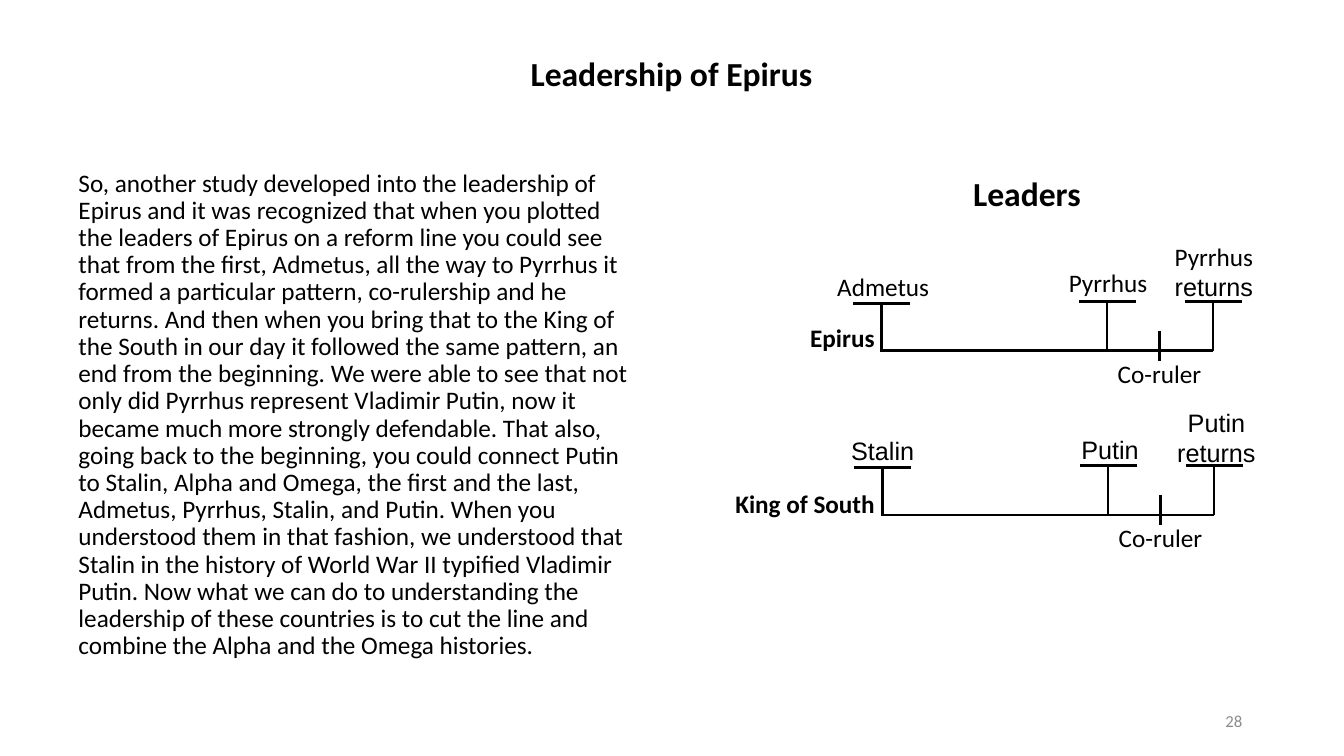
import pptx
import pptx.dml.color
import pptx.enum.shapes
import pptx.enum.text
import pptx.oxml.ns
import pptx.util

BLACK = pptx.dml.color.RGBColor(0x00, 0x00, 0x00)
GRAY = pptx.dml.color.RGBColor(0x8C, 0x8C, 0x8C)
ALIGN = pptx.enum.text.PP_ALIGN
ANCHOR = pptx.enum.text.MSO_ANCHOR
Inches = pptx.util.Inches

BODY_SENTENCES = [
    "So, another study developed into the leadership of Epirus and it was recognized that "
    "when you plotted the leaders of Epirus on a reform line you could see that from the first, "
    "Admetus, all the way to Pyrrhus it formed a particular pattern, co-rulership and he returns.",
    "And then when you bring that to the King of the South in our day it followed the same "
    "pattern, an end from the beginning.",
    "We were able to see that not only did Pyrrhus represent Vladimir Putin, now it became much "
    "more strongly defendable.",
    "That also, going back to the beginning, you could connect Putin to Stalin, Alpha and Omega, "
    "the first and the last, Admetus, Pyrrhus, Stalin, and Putin.",
    "When you understood them in that fashion, we understood that Stalin in the history of "
    "World War II typified Vladimir Putin.",
    "Now what we can do to understanding the leadership of these countries is to cut the line "
    "and combine the Alpha and the Omega histories.",
]

presentation = pptx.Presentation()
presentation.slide_width = Inches(13.33)
presentation.slide_height = Inches(7.5)
slide = presentation.slides.add_slide(presentation.slide_layouts[6])


def add_text(box, lines, size=18, fonts=("Calibri",), bold=False, color=BLACK,
             align=ALIGN.CENTER, anchor=ANCHOR.TOP, inset=None, spacing=None):
    """Add a text box with one paragraph per line; a given inset marks a label that does not wrap."""
    frame = slide.shapes.add_textbox(*map(Inches, box)).text_frame
    frame.word_wrap = inset is None
    frame.vertical_anchor = anchor
    if inset is not None:
        frame.margin_left = frame.margin_right = Inches(inset)
        frame.margin_top = frame.margin_bottom = Inches(inset)
    frame.text = "\n".join(lines)
    for index, paragraph in enumerate(frame.paragraphs):
        paragraph.alignment = align
        paragraph.line_spacing = spacing
        paragraph.font.name = fonts[min(index, len(fonts) - 1)]
        paragraph.font.size = pptx.util.Pt(size)
        paragraph.font.bold = bold
        paragraph.font.color.rgb = color


def add_line(x1, y1, x2, y2):
    line = slide.shapes.add_connector(
        pptx.enum.shapes.MSO_CONNECTOR.STRAIGHT, *map(Inches, (x1, y1, x2, y2)))
    line.line.color.rgb = BLACK
    line.line.width = pptx.util.Pt(2)
    properties = line._element.spPr
    properties.append(properties.makeelement(pptx.oxml.ns.qn("a:effectLst"), {}))


add_text((5.1, 0.47, 3.12, 0.55), ["Leadership of Epirus"], size=24, bold=True,
         anchor=ANCHOR.MIDDLE, spacing=0.9)
add_text((0.68, 1.64, 5.65, 5.06), [" ".join(BODY_SENTENCES)], align=ALIGN.LEFT, spacing=0.9)
add_text((9.42, 6.95, 3, 0.4), ["28"], size=12, color=GRAY, align=ALIGN.RIGHT,
         anchor=ANCHOR.MIDDLE)
add_text((8.81, 1.68, 2.75, 0.43), ["Leaders"], size=24, bold=True, inset=0.04)

# Each timeline: left end, baseline, then labels as (box, lines, fonts, bold)
CALIBRI, ARIAL = ("Calibri",), ("Arial",)
timelines = [
    (8.73, 3.48, [
        ((7.8, 3.16, 1.11, 0.28), ["Epirus"], CALIBRI, True),
        ((8.23, 2.65, 1.06, 0.37), ["Admetus"], CALIBRI, False),
        ((10.52, 2.61, 0.94, 0.39), ["Pyrrhus"], CALIBRI, False),
        ((11.57, 2.35, 0.94, 0.65), ["Pyrrhus", "returns"], CALIBRI + ARIAL, False),
        ((11.03, 3.51, 0.94, 0.39), ["Co-ruler"], CALIBRI, False),
    ]),
    (8.74, 5.11, [
        ((7.21, 4.8, 1.55, 0.36), ["King of South"], CALIBRI, True),
        ((8.37, 4.28, 0.77, 0.34), ["Stalin"], ARIAL, False),
        ((10.68, 4.27, 0.66, 0.4), ["Putin"], ARIAL, False),
        ((11.6, 4, 0.93, 0.67), ["Putin", "returns"], ARIAL, False),
        ((11.04, 5.14, 0.94, 0.39), ["Co-ruler"], CALIBRI, False),
    ]),
]
# Each marker: offset along the line, height of its cap above the baseline
markers = [(0.01, 0.47), (2.25, 0.49), (3.3, 0.49)]

for left, baseline, labels in timelines:
    add_line(left, baseline, left + 3.3, baseline)
    for offset, height in markers:
        x, top = left + offset, baseline - height
        add_line(x - 0.28, top, x + 0.29, top)
        add_line(x, top, x, baseline)
    add_line(left + 2.77, baseline - 0.2, left + 2.77, baseline + 0.1)
    for box, lines, fonts, bold in labels:
        add_text(box, lines, fonts=fonts, bold=bold, inset=0.04)

presentation.save("out.pptx")
